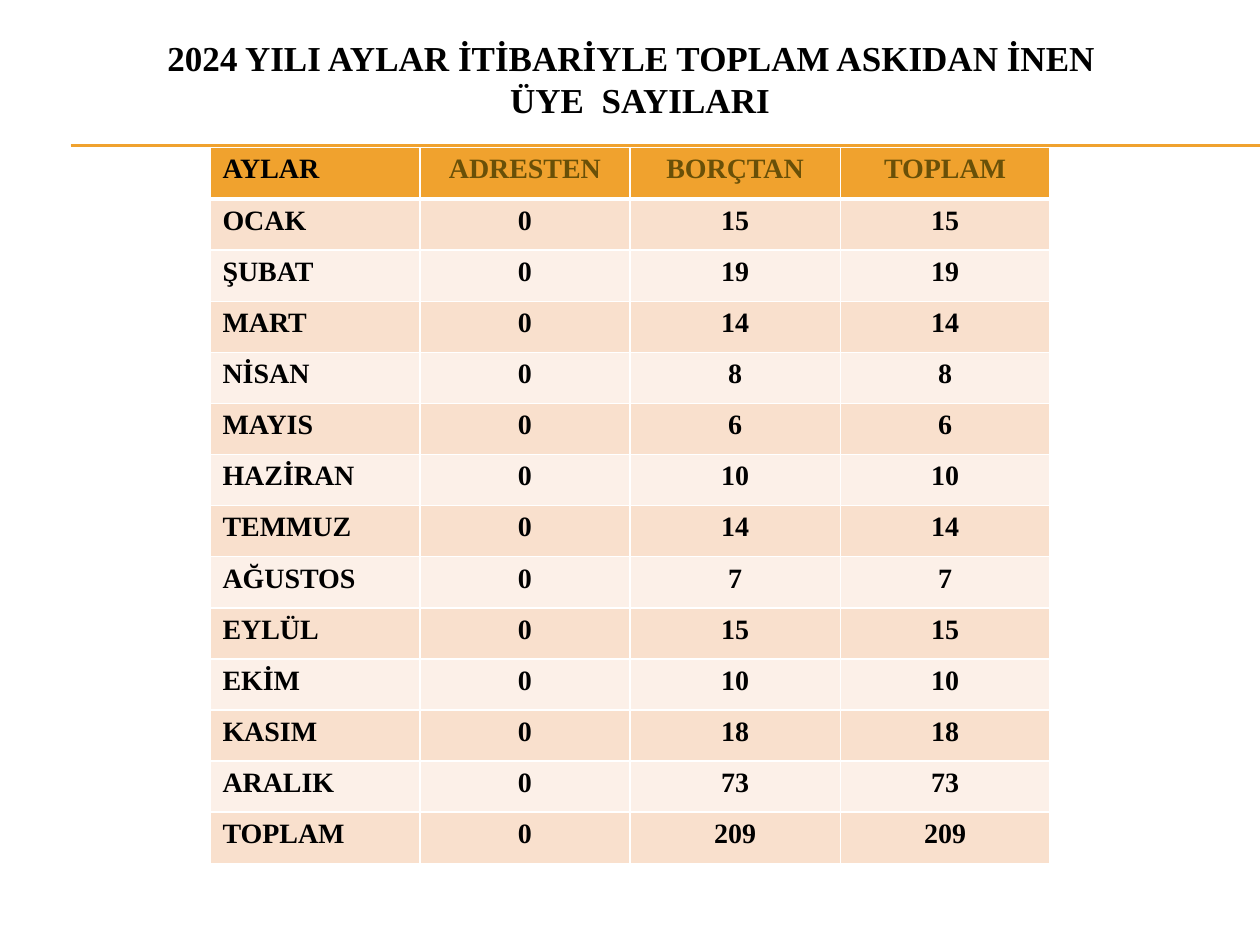
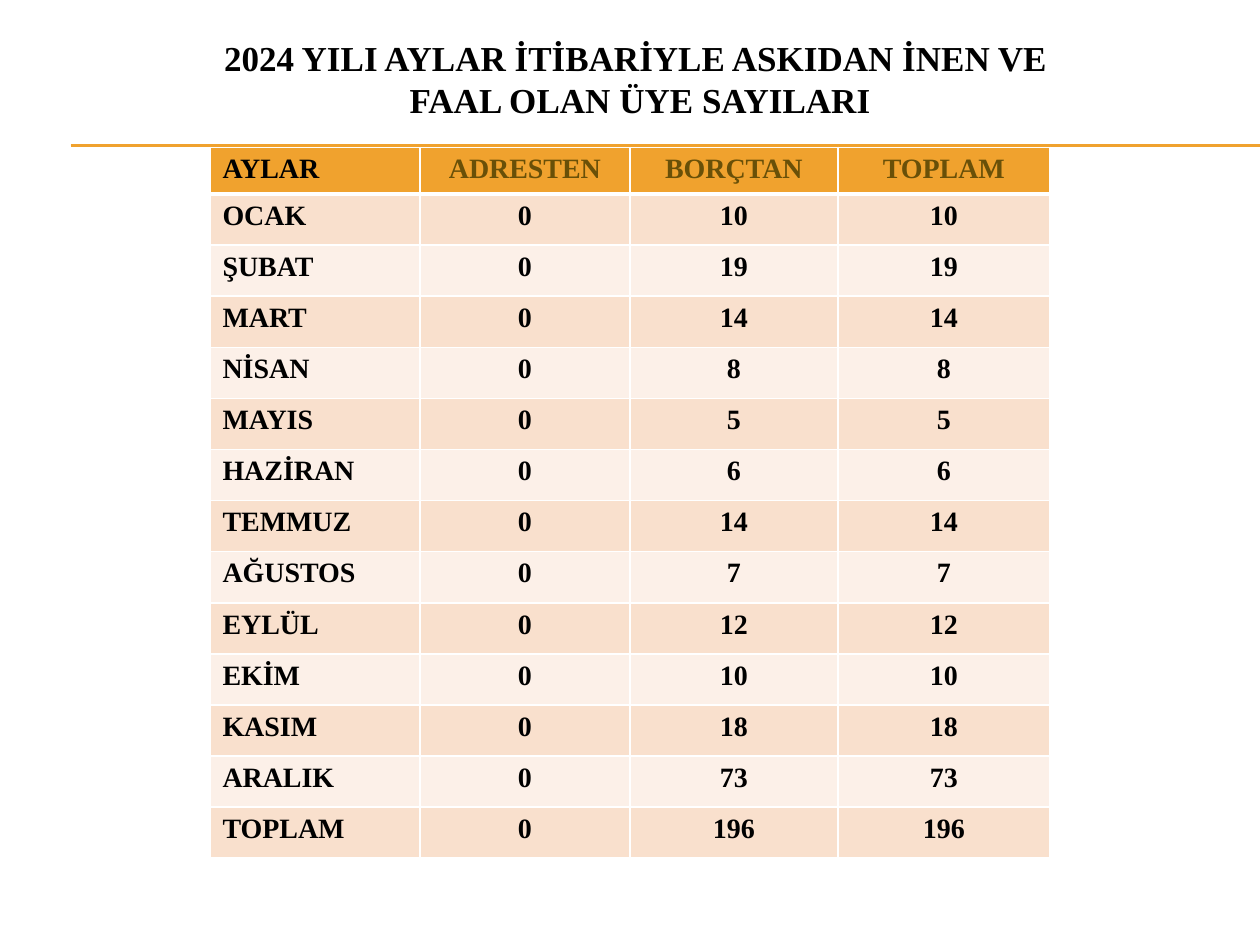
from lxml.etree import SubElement
from pptx import Presentation
from pptx.dml.color import RGBColor as RGB
from pptx.enum.shapes import MSO_CONNECTOR as Connector
from pptx.enum.text import MSO_ANCHOR as Anchor, PP_ALIGN as Align
from pptx.oxml import parse_xml
from pptx.oxml.ns import nsdecls, qn
from pptx.util import Inches, Pt

BLACK = RGB(0x00, 0x00, 0x00)
AMBER = RGB(0xF0, 0xA2, 0x2E)
OLIVE = RGB(0x69, 0x50, 0x08)
PEACH = RGB(0xF9, 0xE0, 0xCD)
CREAM = RGB(0xFC, 0xF0, 0xE8)
WHITE = RGB(0xFF, 0xFF, 0xFF)
FONT = "Times New Roman"

HEADINGS = ["AYLAR", "ADRESTEN", "BORÇTAN", "TOPLAM"]
MONTHS = ["OCAK", "ŞUBAT", "MART", "NİSAN", "MAYIS", "HAZİRAN", "TEMMUZ",
          "AĞUSTOS", "EYLÜL", "EKİM", "KASIM", "ARALIK"]
REPORTS = [
    ("2024 YILI AYLAR İTİBARİYLE TOPLAM ASKIDAN İNEN  \nÜYE  SAYILARI",
     [15, 19, 14, 8, 6, 10, 14, 7, 15, 10, 18, 73], 0.41, 1.67),
    ("2024 YILI AYLAR İTİBARİYLE ASKIDAN İNEN VE \nFAAL OLAN ÜYE SAYILARI",
     [10, 19, 14, 8, 5, 6, 14, 7, 12, 10, 18, 73], 0.37, 1.65),
]

deck = Presentation()
deck.slide_width, deck.slide_height = Inches(10), Inches(7.5)
WIDTH = deck.slide_width
COLUMN = WIDTH // 6
ROW = Inches(5.68) // 14


def write(frame, text, size=16, color=BLACK, align=Align.LEFT):
    paragraph = frame.paragraphs[0]
    paragraph.text = text
    paragraph.alignment = align
    for run in paragraph.runs:
        run.font.name = FONT
        run.font.size = Pt(size)
        run.font.bold = True
        run.font.color.rgb = color


def set_borders(cell, top, bottom):
    props = cell._tc.get_or_add_tcPr()
    sides = [("lnL", 1), ("lnR", 1), ("lnT", top), ("lnB", bottom)]
    for place, (side, points) in enumerate(sides):
        props.insert(place, parse_xml(
            f'<a:{side} {nsdecls("a")} w="{Pt(points)}"><a:solidFill>'
            f'<a:srgbClr val="{WHITE}"/></a:solidFill></a:{side}>'))


for title, from_debt, heading_height, debt_width in REPORTS:
    slide = deck.slides.add_slide(deck.slide_layouts[6])
    slide.background.fill.solid()
    slide.background.fill.fore_color.rgb = WHITE

    for y in (Inches(1.15), Inches(1.16)):
        rule = slide.shapes.add_connector(
            Connector.STRAIGHT, Inches(0.56), y, WIDTH, y)
        rule.line.color.rgb = AMBER
        rule.line.width = Pt(0.75)
        SubElement(rule._element.spPr, qn("a:effectLst"))

    heading = slide.shapes.add_textbox(
        Inches(0.33), Inches(0.16), Inches(9.5), Inches(0.92)).text_frame
    heading.word_wrap = True
    heading.vertical_anchor = Anchor.MIDDLE
    write(heading, title, size=20, align=Align.CENTER)

    records = [HEADINGS]
    records += [[month, 0, count, count] for month, count in zip(MONTHS, from_debt)]
    records.append(["TOPLAM", 0, sum(from_debt), sum(from_debt)])

    members = slide.shapes.add_table(
        len(records), len(HEADINGS), COLUMN, Inches(1.17),
        4 * COLUMN, ROW * len(records)).table
    members.columns[2].width = Inches(debt_width)
    members.columns[3].width = 2 * COLUMN - Inches(debt_width)

    for r, record in enumerate(records):
        members.rows[r].height = ROW if r else Inches(heading_height)
        for c, value in enumerate(record):
            cell = members.cell(r, c)
            cell.fill.solid()
            cell.fill.fore_color.rgb = (PEACH if r % 2 else CREAM) if r else AMBER
            set_borders(cell, top=3 if r == 1 else 1, bottom=1 if r else 3)
            write(cell.text_frame, str(value),
                  color=OLIVE if r == 0 and c else BLACK,
                  align=Align.CENTER if c else Align.LEFT)

deck.save("out.pptx")
